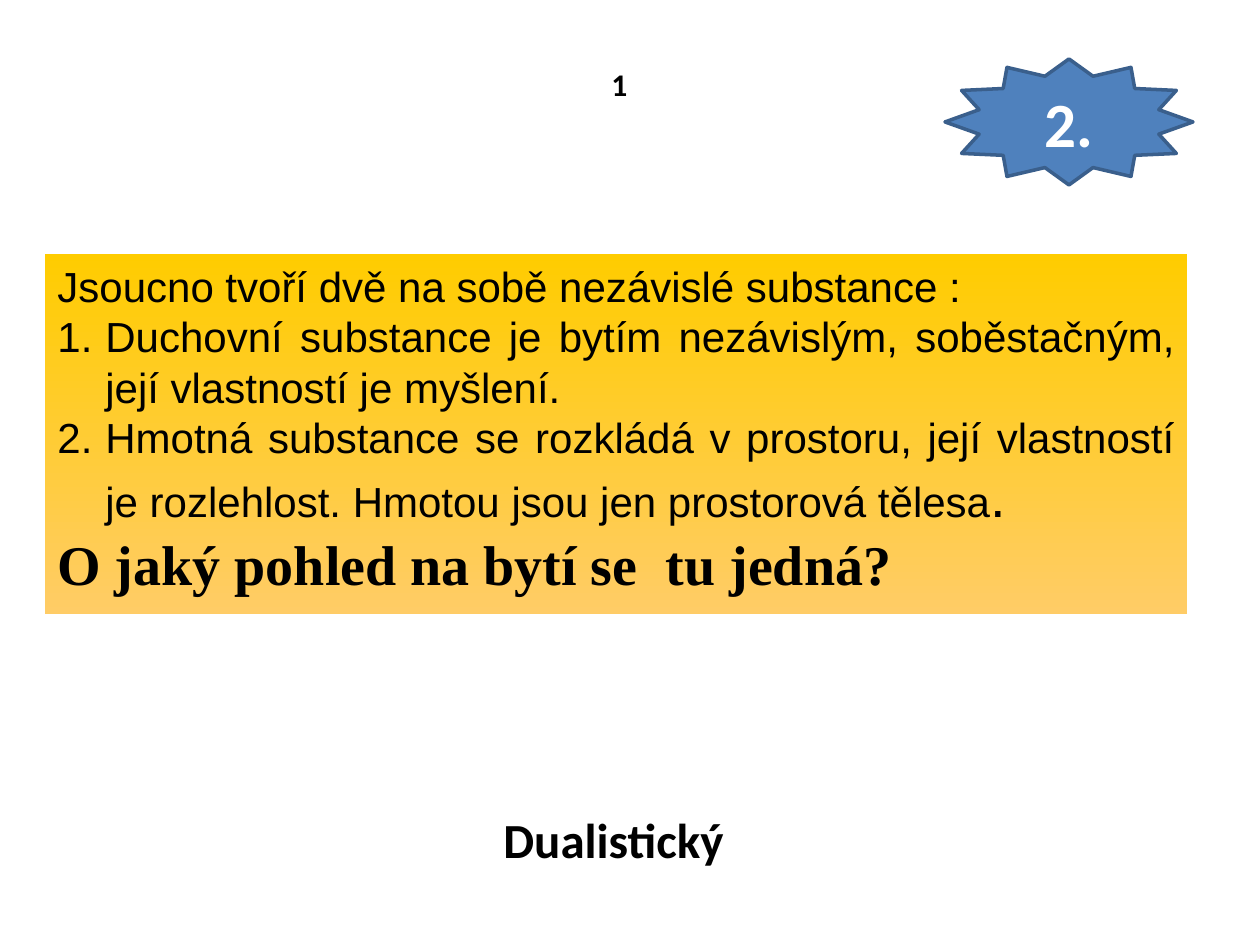
from lxml.etree import SubElement
from pptx import Presentation
from pptx.dml.color import RGBColor
from pptx.enum.shapes import MSO_SHAPE as Preset
from pptx.enum.text import MSO_ANCHOR as Anchor, MSO_AUTO_SIZE as AutoSize, PP_ALIGN as Align
from pptx.oxml.ns import qn
from pptx.util import Pt

EMU_PER_PX = 914400 / 126
HANGING = 48
COLORS = {
    "text": "000000",
    "inverse": "FFFFFF",
    "gold": "FFCC00",
    "amber": "FFCC66",
    "star": "4F81BD",
    "star_edge": "3A5F8C",
}
HEADING = {"name": "Calibri", "size": Pt(18), "bold": True}
BADGE = {"name": "Calibri", "size": Pt(36), "bold": True}
ANSWER = {"name": "Calibri", "size": Pt(28), "bold": True}
BODY = {"name": "Arial", "size": Pt(24), "bold": False}
BODY_END = {"name": "Arial", "size": Pt(32), "bold": False}
QUESTION = {"name": "Times New Roman", "size": Pt(32), "bold": True}

STATEMENTS = [
    (False, Align.JUSTIFY, [("Jsoucno tvoří dvě na sobě nezávislé substance :", BODY)]),
    (True, Align.JUSTIFY, [
        ("Duchovní substance je bytím nezávislým, soběstačným, její vlastností je myšlení.", BODY),
    ]),
    (True, Align.JUSTIFY, [
        ("Hmotná substance se rozkládá v prostoru, její vlastností je rozlehlost. "
         "Hmotou jsou jen prostorová tělesa", BODY),
        (". ", BODY_END),
    ]),
    (False, Align.LEFT, [("O jaký pohled na bytí se  tu jedná?", QUESTION)]),
]


def px(length):
    return round(length * EMU_PER_PX)


def emu_box(box):
    return [px(length) for length in box]


def rgb(color):
    return RGBColor.from_string(COLORS[color])


def apply(target, values):
    for attribute, value in values.items():
        setattr(target, attribute, value)


def add_run(paragraph, wording, style, color="text"):
    run = paragraph.add_run()
    run.text = wording
    apply(run.font, style)
    run.font.color.rgb = rgb(color)


def set_hanging(paragraph, numbered):
    properties = paragraph._p.get_or_add_pPr()
    properties.set("marL", str(px(HANGING)))
    properties.set("indent", str(-px(HANGING)))
    if numbered:
        SubElement(properties, qn("a:buFont"), typeface="+mj-lt")
        SubElement(properties, qn("a:buAutoNum"), type="arabicPeriod")
    else:
        SubElement(properties, qn("a:buNone"))


def place_heading(slide, box):
    heading = slide.shapes.title
    apply(heading, dict(zip(("left", "top", "width", "height"), emu_box(box))))
    apply(heading.text_frame, {"vertical_anchor": Anchor.MIDDLE, "word_wrap": True})
    paragraph = heading.text_frame.paragraphs[0]
    paragraph.alignment = Align.CENTER
    add_run(paragraph, "1", HEADING)


def add_statement_panel(slide, box):
    panel = slide.shapes.add_shape(Preset.RECTANGLE, *emu_box(box))
    panel.shadow.inherit = False
    panel.line.fill.background()
    panel.fill.gradient()
    panel.fill.gradient_angle = 270
    for stop, color, position in zip(panel.fill.gradient_stops, ("gold", "amber"), (0, 1)):
        stop.color.rgb = rgb(color)
        stop.position = position
    frame = panel.text_frame
    apply(frame, {
        "word_wrap": True,
        "vertical_anchor": Anchor.TOP,
        "auto_size": AutoSize.SHAPE_TO_FIT_TEXT,
    })
    for index, (numbered, alignment, runs) in enumerate(STATEMENTS):
        paragraph = frame.add_paragraph() if index else frame.paragraphs[0]
        paragraph.alignment = alignment
        set_hanging(paragraph, numbered)
        for wording, style in runs:
            add_run(paragraph, wording, style)


def add_number_star(slide, box):
    star = slide.shapes.add_shape(Preset.STAR_12_POINT, *emu_box(box))
    star.shadow.inherit = False
    star.fill.solid()
    star.fill.fore_color.rgb = rgb("star")
    star.line.color.rgb = rgb("star_edge")
    star.line.width = Pt(2)
    star.text_frame.vertical_anchor = Anchor.MIDDLE
    paragraph = star.text_frame.paragraphs[0]
    paragraph.alignment = Align.CENTER
    add_run(paragraph, "2.", BADGE, "inverse")


def add_answer(slide, box):
    answer = slide.shapes.add_textbox(*emu_box(box))
    apply(answer.text_frame, {"word_wrap": False, "auto_size": AutoSize.SHAPE_TO_FIT_TEXT})
    add_run(answer.text_frame.paragraphs[0], "Dualistický", ANSWER)


def main():
    deck = Presentation()
    apply(deck, {"slide_width": px(1260), "slide_height": px(945)})
    slide = deck.slides.add_slide(deck.slide_layouts[5])
    place_heading(slide, (530, 35, 179, 97))
    add_statement_panel(slide, (45, 254, 1142, 360))
    add_number_star(slide, (945, 59, 248, 126))
    add_answer(slide, (491, 803, 248, 72))
    deck.save("out.pptx")


if __name__ == "__main__":
    main()
